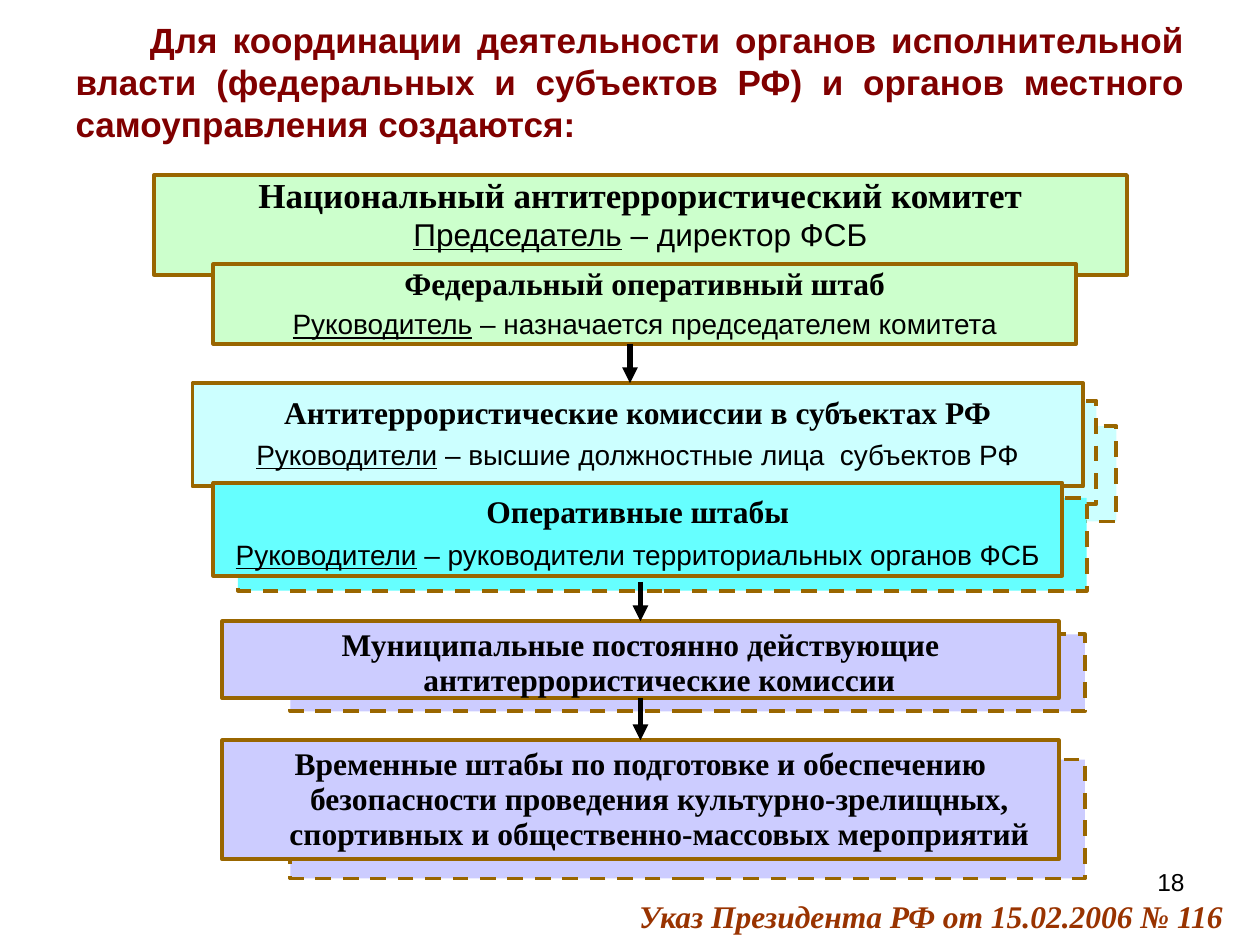
from lxml.etree import SubElement
from pptx import Presentation
from pptx.dml.color import RGBColor
from pptx.enum.dml import MSO_LINE
from pptx.enum.shapes import MSO_CONNECTOR, MSO_SHAPE
from pptx.enum.text import MSO_ANCHOR, MSO_AUTO_SIZE, PP_ALIGN
from pptx.oxml.ns import qn
from pptx.util import Pt

BLACK = RGBColor(0x00, 0x00, 0x00)
MAROON = RGBColor(0x80, 0x00, 0x00)
RUST = RGBColor(0x99, 0x33, 0x00)
BROWN = RGBColor(0x99, 0x66, 0x00)
GREEN = RGBColor(0xCC, 0xFF, 0xCC)
PALE_CYAN = RGBColor(0xCC, 0xFF, 0xFF)
CYAN = RGBColor(0x66, 0xFF, 0xFF)
LILAC = RGBColor(0xCC, 0xCC, 0xFF)

SERIF, SANS = "Times New Roman", "Arial"
HANG = 21.6


def set_attrs(obj, **values):
    for name, value in values.items():
        setattr(obj, name, value)


def place(shape, box):
    set_attrs(shape, **dict(zip(("left", "top", "width", "height"), map(Pt, box))))


def add_run(p, text, color=BLACK, **font):
    r = p.add_run()
    r.text = text
    set_attrs(r.font, **font)
    r.font.color.rgb = color


def set_indent(p, left, first):
    pPr = p._p.get_or_add_pPr()
    pPr.set("marL", str(Pt(left)))
    pPr.set("indent", str(Pt(first)))


def add_title(s, box, text):
    title = s.shapes.title
    place(title, box)
    tf = title.text_frame
    set_attrs(tf, word_wrap=True, auto_size=MSO_AUTO_SIZE.NONE,
              vertical_anchor=MSO_ANCHOR.MIDDLE)
    p = tf.paragraphs[0]
    set_indent(p, 0, 42.5)
    set_attrs(p, alignment=PP_ALIGN.JUSTIFY, line_spacing=Pt(24))
    add_run(p, text, MAROON, name=SANS, size=Pt(20), bold=True)


def add_note(s, box, text, color=BLACK, **font):
    tf = s.shapes.add_textbox(*map(Pt, box)).text_frame
    tf.word_wrap = True
    p = tf.paragraphs[0]
    p.alignment = PP_ALIGN.RIGHT
    add_run(p, text, color, **font)


def add_box(s, box, fill, dashed=False):
    sp = s.shapes.add_shape(MSO_SHAPE.RECTANGLE, *map(Pt, box))
    sp.shadow.inherit = False
    sp.fill.solid()
    sp.fill.fore_color.rgb = fill
    sp.line.color.rgb = BROWN
    sp.line.width = Pt(2.25)
    if dashed:
        sp.line.dash_style = MSO_LINE.DASH
    return sp


def add_body(s, box, fill, name, head=None, sizes=(18, 16), spacing=None,
             hang=HANG, inset=3.6, behind=()):
    """Box with a bold name and an optional head line, over dashed boxes."""
    for back in behind:
        add_box(s, back, fill, dashed=True)
    sp = add_box(s, box, fill)
    tf = sp.text_frame
    set_attrs(tf, word_wrap=True, vertical_anchor=MSO_ANCHOR.TOP,
              margin_top=Pt(inset))
    p = tf.paragraphs[0]
    add_run(p, name, name=SERIF, size=Pt(sizes[0]), bold=True)
    if head:
        p = tf.add_paragraph()
        p.space_before = Pt(4)
        font = dict(name=SANS, size=Pt(sizes[1]), bold=False)
        add_run(p, head[0], underline=True, **font)
        add_run(p, head[1], **font)
    for p in tf.paragraphs:
        set_indent(p, hang, -hang)
        p.alignment = PP_ALIGN.CENTER
        if spacing:
            p.line_spacing = spacing
    return sp


def add_arrow(s, x, top, bottom, begin=None, end=None):
    c = s.shapes.add_connector(MSO_CONNECTOR.STRAIGHT,
                               Pt(x), Pt(top), Pt(x), Pt(bottom))
    if begin is not None:
        c.begin_connect(begin, 2)
    if end is not None:
        c.end_connect(end, 0)
    c.line.color.rgb = BLACK
    c.line.width = Pt(3)
    SubElement(c.line._get_or_add_ln(), qn("a:tailEnd"), type="triangle")
    SubElement(c._element.spPr, qn("a:effectLst"))


def add_federal_level(s, x, y):
    add_body(s, (x, y, 556, 57), GREEN,
             "Национальный антитеррористический комитет",
             ("Председатель", " – директор ФСБ"),
             sizes=(20, 18), spacing=0.8, hang=13.5)
    add_body(s, (x + 34, y + 51, 493, 45.5), GREEN,
             "Федеральный оперативный штаб",
             ("Руководитель", " – назначается председателем комитета"),
             spacing=Pt(18))


def add_regional_level(s, x, y):
    add_body(s, (x, y, 509, 59), PALE_CYAN,
             "Антитеррористические комиссии в субъектах РФ",
             ("Руководители", " – высшие должностные лица  субъектов РФ"),
             inset=5.4,
             behind=[(x + 37, y + 24.5, 491, 54.5), (x + 19, y + 10, 497.5, 59)])
    add_body(s, (x + 12, y + 57, 485, 53), CYAN, "Оперативные штабы",
             ("Руководители", " – руководители территориальных органов ФСБ"),
             inset=5.4, behind=[(x + 26, y + 65.5, 485, 53)])


def add_local_level(s, x, y, height, drop, name):
    return add_body(s, (x, y, 478, height), LILAC, name, spacing=Pt(20),
                    behind=[(x + 39, y + drop, 454, height)])


def main():
    prs = Presentation()
    set_attrs(prs, slide_width=Pt(720), slide_height=Pt(540))
    s = prs.slides.add_slide(prs.slide_layouts[5])

    add_title(s, (36, 21.6, 648, 50),
              "Для координации деятельности органов исполнительной власти "
              "(федеральных и субъектов РФ) и органов местного "
              "самоуправления создаются:")

    # Levels from the federal centre down
    add_federal_level(s, 88, 100)
    add_regional_level(s, 110, 219)
    municipal = add_local_level(
        s, 127, 355, 44, 7.5,
        "Муниципальные постоянно действующие антитеррористические комиссии")
    temporary = add_local_level(
        s, 127, 423, 68, 11,
        "Временные штабы по подготовке и обеспечению безопасности проведения "
        "культурно-зрелищных, спортивных и общественно-массовых мероприятий")

    # Arrows between levels
    add_arrow(s, 360, 196.5, 219)
    add_arrow(s, 366, 332.5, 355, end=municipal)
    add_arrow(s, 366, 399, 423, begin=municipal, end=temporary)

    # Slide number and legal source
    add_note(s, (516, 492, 168, 37), "18", name=SANS, size=Pt(14))
    add_note(s, (241, 509, 465, 31), "Указ Президента РФ от 15.02.2006 № 116",
             RUST, name=SERIF, size=Pt(18), bold=True, italic=True)

    prs.save("out.pptx")


if __name__ == "__main__":
    main()
